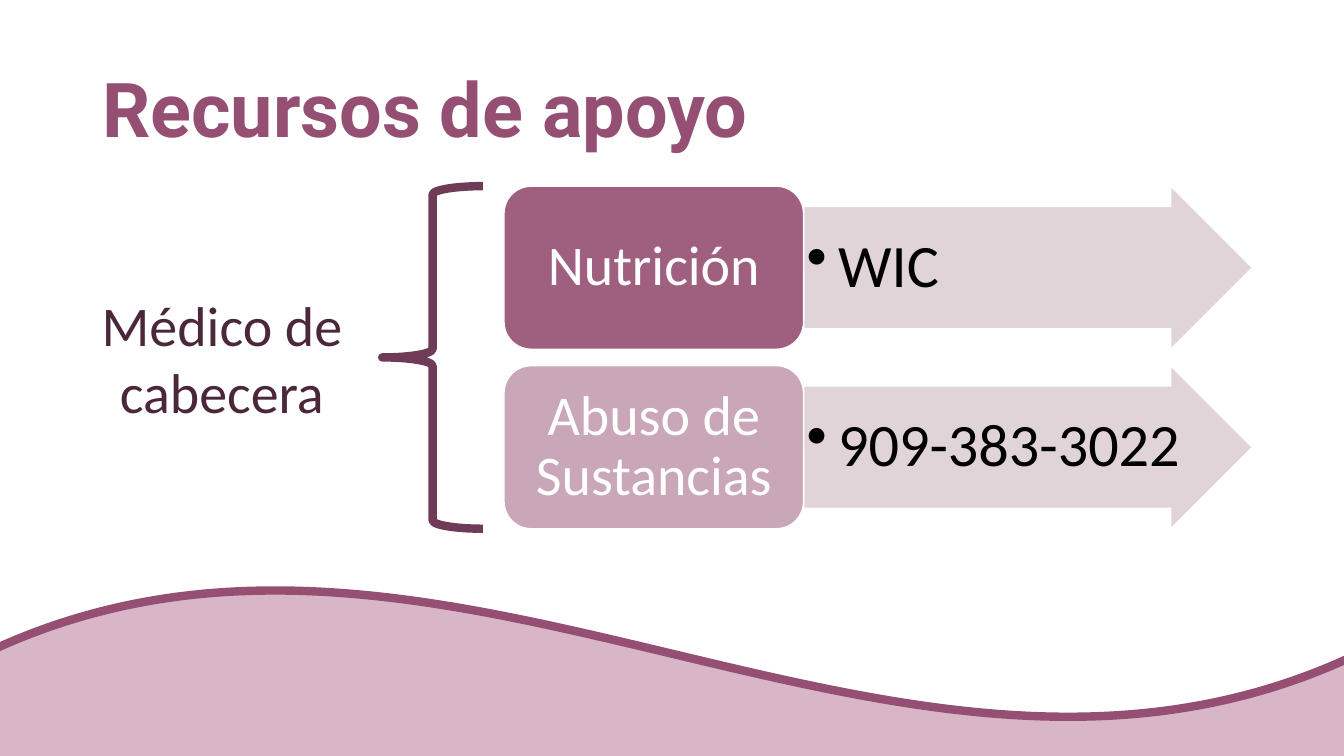
from lxml import etree
from pptx import Presentation
from pptx.dml.color import RGBColor
from pptx.enum import shapes, text
from pptx.oxml import ns
from pptx.util import Pt

PLUM = RGBColor(0x95, 0x4F, 0x72)
DARK_PLUM = RGBColor(0x70, 0x3B, 0x56)
DEEP_PLUM = RGBColor(0x4A, 0x28, 0x39)
PINK = RGBColor(0xD8, 0xB5, 0xC7)
PALE = RGBColor(0xDD, 0xD0, 0xD5)
WHITE = RGBColor(0xFF, 0xFF, 0xFF)
BLACK = RGBColor(0, 0, 0)


class SlideBuilder:
    """Holds the slide and its style; all lengths are in points."""

    body_font = "Calibri"
    title_font = "Roboto"

    def __init__(self, slide):
        self.slide = slide

    def shape(self, kind, box, line, width, fill=None, opacity=100):
        shape = self.slide.shapes.add_shape(kind, *map(Pt, box))
        shape.shadow.inherit = False
        shape.line.color.rgb = line
        shape.line.width = Pt(width)
        if fill is None:
            shape.fill.background()
            return shape
        shape.fill.solid()
        shape.fill.fore_color.rgb = fill
        if opacity < 100:
            solid_fill = shape._element.spPr.find(ns.qn("a:solidFill"))
            color = solid_fill.find(ns.qn("a:srgbClr"))
            etree.SubElement(color, ns.qn("a:alpha"), val=str(opacity * 1000))
        return shape

    def set_text(self, shape, words, size, color, align=text.PP_ALIGN.CENTER,
                 spacing=None, insets=(7.2, 3.6), font=None, bold=False, bullet=False):
        frame = shape.text_frame
        frame.word_wrap = True
        frame.vertical_anchor = text.MSO_ANCHOR.MIDDLE
        frame.margin_left = frame.margin_right = Pt(insets[0])
        frame.margin_top = frame.margin_bottom = Pt(insets[1])
        paragraph = frame.paragraphs[0]
        paragraph.text = words
        paragraph.alignment = align
        if spacing:
            paragraph.line_spacing = spacing
        if bullet:
            properties = paragraph._p.get_or_add_pPr()
            properties.set("marL", str(Pt(22.5)))
            properties.set("indent", str(-Pt(22.5)))
            etree.SubElement(properties, ns.qn("a:buChar"), char="•")
        paragraph.font.name = font or self.body_font
        paragraph.font.size = Pt(size)
        paragraph.font.bold = bold
        paragraph.font.color.rgb = color

    def label(self, box, words, size, color, **style):
        self.set_text(self.slide.shapes.add_textbox(*map(Pt, box)),
                      words, size, color, **style)

    def resource(self, top, name, detail, opacity):
        """One row: an arrow with the detail and a rounded box with the name."""
        kinds = shapes.MSO_SHAPE
        arrow = self.shape(kinds.RIGHT_ARROW, (574, top, 320.5, 116.5), WHITE, 1, PALE, 90)
        arrow.adjustments[0] = 0.75
        arrow.adjustments[1] = 0.5
        self.set_text(arrow, detail, 43, BLACK, align=text.PP_ALIGN.LEFT, spacing=0.9,
                      insets=(2.2, 2.2), bullet=True)
        box = self.shape(kinds.ROUNDED_RECTANGLE, (360, top, 214, 116.5),
                         WHITE, 1, PLUM, opacity)
        self.set_text(box, name, 40, WHITE, spacing=0.9, insets=(12, 6))


def main():
    presentation = Presentation()
    presentation.slide_width = Pt(960)
    presentation.slide_height = Pt(540)
    builder = SlideBuilder(presentation.slides.add_slide(presentation.slide_layouts[6]))

    # Wave along the bottom
    builder.shape(shapes.MSO_SHAPE.WAVE, (-11, 420, 981.5, 375), PLUM, 6, PINK)

    # Title
    builder.label((66, 28.75, 828, 104.4), "Recursos de apoyo", 54, PLUM,
                  align=text.PP_ALIGN.LEFT, spacing=0.9,
                  font=builder.title_font, bold=True)

    # Resource rows
    resources = [("Nutrición", "WIC", 90), ("Abuso de Sustancias", "909-383-3022", 50)]
    for row, resource in enumerate(resources):
        builder.resource(133 + row * 128.2, *resource)

    # Brace and its label
    builder.shape(shapes.MSO_SHAPE.LEFT_BRACE, (273, 133, 72, 244.7), DARK_PLUM, 6)
    builder.label((49.5, 142, 218, 227.5), "Médico de cabecera", 40, DEEP_PLUM)

    presentation.save("out.pptx")


if __name__ == "__main__":
    main()
